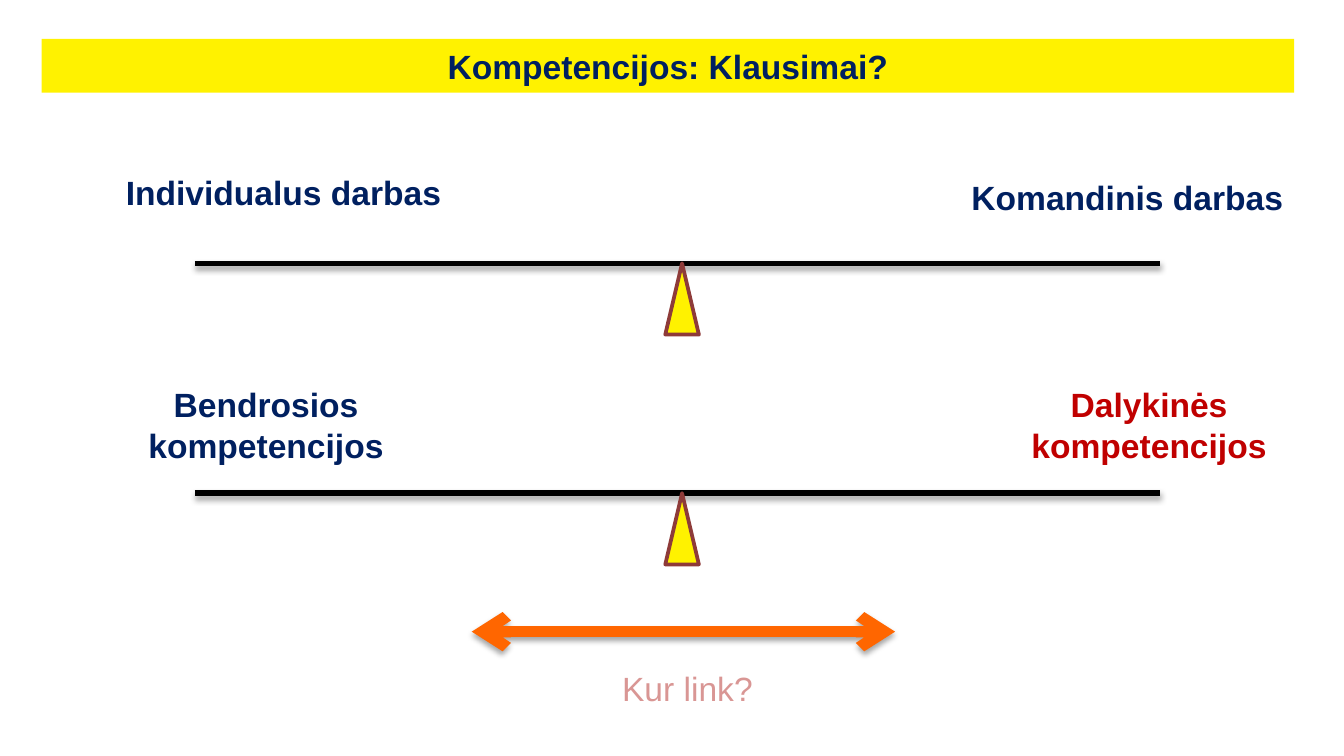
from lxml import etree
from pptx import Presentation
from pptx.dml.color import RGBColor
from pptx.enum.shapes import MSO_CONNECTOR, MSO_SHAPE
from pptx.enum.text import MSO_ANCHOR, MSO_AUTO_SIZE, PP_ALIGN
from pptx.oxml.ns import qn
from pptx.util import Inches, Pt

STRAIGHT = MSO_CONNECTOR.STRAIGHT
TRIANGLE, RECTANGLE = MSO_SHAPE.ISOSCELES_TRIANGLE, MSO_SHAPE.RECTANGLE
LEFT, CENTER = PP_ALIGN.LEFT, PP_ALIGN.CENTER
TOP = MSO_ANCHOR.TOP
FIT_SHAPE = MSO_AUTO_SIZE.SHAPE_TO_FIT_TEXT

NAVY = RGBColor(0x00, 0x20, 0x60)
RED = RGBColor(0xC0, 0x00, 0x00)
PINK = RGBColor(0xD9, 0x96, 0x94)
YELLOW = RGBColor(0xFF, 0xF2, 0x00)
BROWN = RGBColor(0x8E, 0x3B, 0x39)
ORANGE = RGBColor(0xFF, 0x66, 0x00)
BLACK = RGBColor(0x00, 0x00, 0x00)

FONT = "Arial"
PAGE_WIDTH = Inches(10)
PAGE_HEIGHT = PAGE_WIDTH * 9 // 16
BEAM_LEFT, BEAM_WIDTH = 1.45, 7.18
PIVOT_OFFSET, PIVOT_WIDTH, PIVOT_HEIGHT = 3.5, 0.25, 0.53


def write_text(box, text, color=NAVY, bold=True, align=CENTER, wrap=True):
    frame = box.text_frame
    frame.word_wrap = wrap
    frame.auto_size = FIT_SHAPE
    frame.vertical_anchor = TOP
    para = frame.paragraphs[0]
    para.alignment = align
    span = para.add_run()
    span.text = text
    span.font.name = FONT
    span.font.size = Pt(18)
    span.font.bold = bold
    span.font.color.rgb = color


def add_label(page, left, top, width, height, text, **text_format):
    box = page.shapes.add_textbox(Inches(left), Inches(top), Inches(width), Inches(height))
    write_text(box, text, **text_format)


def add_shadow(connector):
    """Give the connector a soft shadow that falls straight down."""
    effects = etree.SubElement(connector._element.spPr, qn("a:effectLst"))
    shadow = etree.SubElement(effects, qn("a:outerShdw"), blurRad=str(Pt(3.1)),
                              dist=str(Pt(1.8)), dir="5400000", rotWithShape="0")
    shade = etree.SubElement(shadow, qn("a:srgbClr"), val=str(BLACK))
    etree.SubElement(shade, qn("a:alpha"), val="35000")


def add_line(page, left, top, width, color, weight, arrows=False):
    line = page.shapes.add_connector(STRAIGHT, Inches(left), Inches(top),
                                     Inches(left + width), Inches(top))
    line.line.color.rgb = color
    line.line.width = Pt(weight)
    if arrows:
        outline = line.line._get_or_add_ln()
        for end in ("a:headEnd", "a:tailEnd"):
            etree.SubElement(outline, qn(end), type="arrow")
    add_shadow(line)


def add_balance(page, left, top, width):
    """Draw a beam resting on the tip of a triangular pivot."""
    add_line(page, left, top, width, BLACK, 3)
    pivot = page.shapes.add_shape(TRIANGLE, Inches(left + PIVOT_OFFSET), Inches(top),
                                  Inches(PIVOT_WIDTH), Inches(PIVOT_HEIGHT))
    pivot.shadow.inherit = False
    pivot.fill.solid()
    pivot.fill.fore_color.rgb = YELLOW
    pivot.line.color.rgb = BROWN
    pivot.line.width = Pt(2)


def add_title_bar(page, left, top, width, height, text):
    bar = page.shapes.add_shape(RECTANGLE, Inches(left), Inches(top),
                                Inches(width), Inches(height))
    bar.shadow.inherit = False
    bar.fill.solid()
    bar.fill.fore_color.rgb = YELLOW
    bar.line.fill.background()
    write_text(bar, text)


def add_link_question(page, left, top, width):
    """Draw the double arrow with its question below."""
    add_line(page, left, top, width, ORANGE, 6, arrows=True)
    add_label(page, left + 1.02, top + 0.22, 1.18, 0.4, "Kur link?",
              color=PINK, bold=False, align=LEFT, wrap=False)


def main():
    deck = Presentation()
    deck.slide_width, deck.slide_height = PAGE_WIDTH, PAGE_HEIGHT
    page = deck.slides.add_slide(deck.slide_layouts[6])

    add_title_bar(page, 0.31, 0.29, 9.32, 0.4, "Kompetencijos: Klausimai?")

    add_balance(page, BEAM_LEFT, 1.96, BEAM_WIDTH)
    add_label(page, 0.67, 1.23, 2.88, 0.4, "Individualus darbas")
    add_label(page, 7.13, 1.27, 2.54, 0.4, "Komandinis darbas", align=LEFT, wrap=False)

    add_balance(page, BEAM_LEFT, 3.67, BEAM_WIDTH)
    add_label(page, 0.78, 2.81, 2.4, 0.71, "Bendrosios kompetencijos")
    add_label(page, 7.28, 2.81, 2.54, 0.71, "Dalykinės kompetencijos", color=RED)

    add_link_question(page, 3.51, 4.7, 3.15)
    deck.save("out.pptx")


if __name__ == "__main__":
    main()
